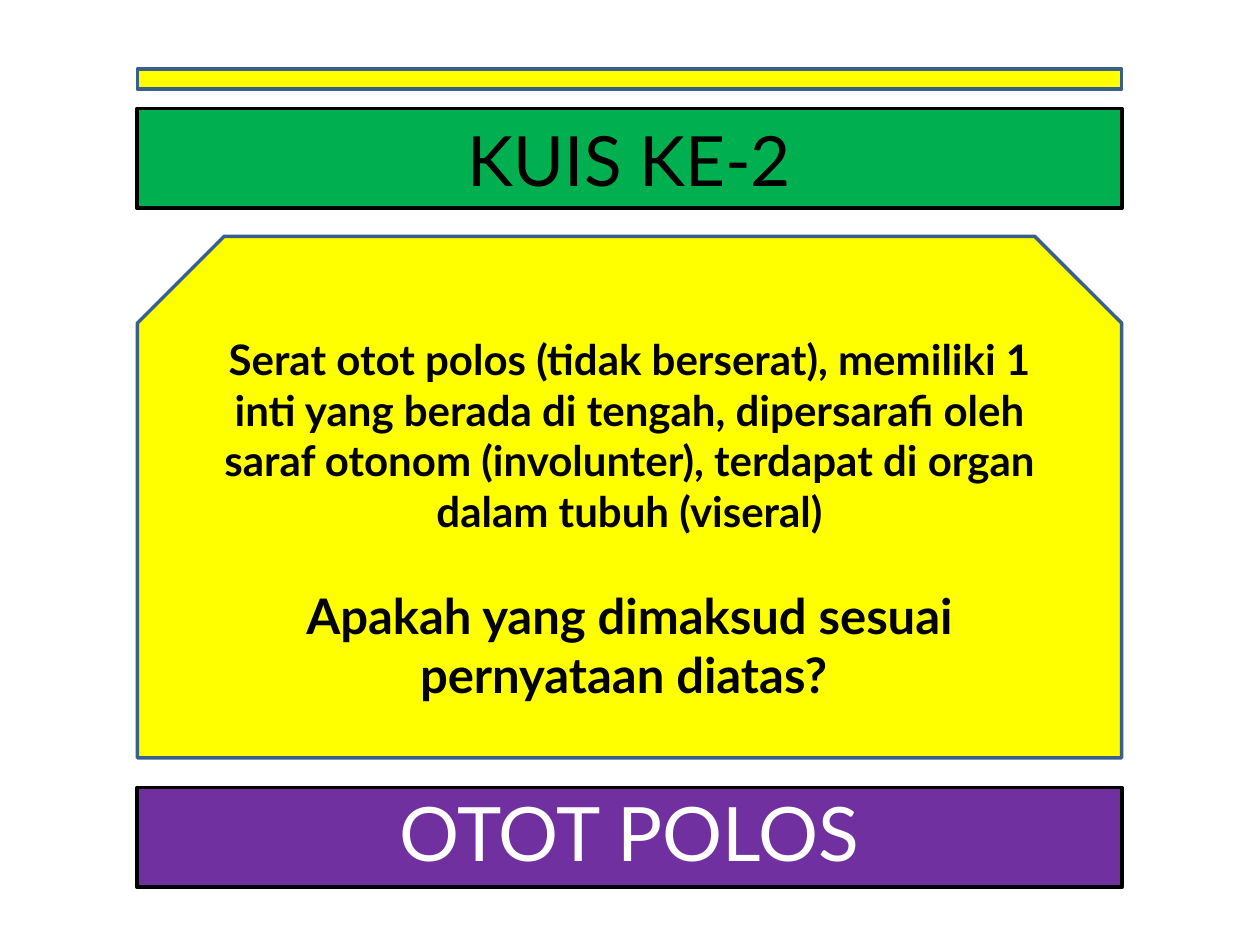
from pptx import Presentation
from pptx.dml.color import RGBColor
from pptx.enum.shapes import MSO_SHAPE as SHAPE
from pptx.enum.text import MSO_ANCHOR as ANCHOR, MSO_AUTO_SIZE as FIT, PP_ALIGN as ALIGN
from pptx.util import Pt

LEFT, WIDTH = 78.5, 562.5
BANNER_HEIGHT = 57
YELLOW, BLACK, EDGE = "FFFF00", "000000", "3A5F8C"


def rgb(value):
    """Turn a hex string into a colour."""
    return RGBColor.from_string(value)


def set_all(target, values):
    """Set every attribute named in a dict."""
    for name, value in values.items():
        setattr(target, name, value)


def paint(sp, fill, line, weight):
    """Give a shape a solid fill and an outline."""
    sp.fill.solid()
    sp.fill.fore_color.rgb = rgb(fill)
    sp.line.color.rgb = rgb(line)
    sp.line.width = Pt(weight)


def write(sp, paragraphs, color, bold=False):
    """Write centred paragraphs given as text, size and paragraph format."""
    tf = sp.text_frame
    set_all(tf, {"word_wrap": True, "auto_size": FIT.NONE, "vertical_anchor": ANCHOR.MIDDLE})
    for i, (text, size, layout) in enumerate(paragraphs):
        p = tf.add_paragraph() if i else tf.paragraphs[0]
        set_all(p, {"alignment": ALIGN.CENTER, **layout})
        r = p.add_run()
        r.text = text
        set_all(r.font, {"name": "Lato", "size": Pt(size), "bold": bold})
        r.font.color.rgb = rgb(color)


def add_block(s, kind, top, height, fill, line, weight):
    """Add a full-width block without a shadow."""
    sp = s.shapes.add_shape(kind, Pt(LEFT), Pt(top), Pt(WIDTH), Pt(height))
    sp.shadow.inherit = False
    paint(sp, fill, line, weight)
    return sp


def add_title(s, text, top):
    """Place the title placeholder as a green banner."""
    sp = s.shapes.title
    set_all(sp, {"left": Pt(LEFT), "top": Pt(top), "width": Pt(WIDTH), "height": Pt(BANNER_HEIGHT)})
    paint(sp, "00B050", BLACK, 2.25)
    write(sp, [(text, 39.6, {})], BLACK)


def main():
    """Build the quiz slide."""
    prs = Presentation()
    set_all(prs, {"slide_width": Pt(720), "slide_height": Pt(540)})
    s = prs.slides.add_slide(prs.slide_layouts[5])

    add_title(s, "KUIS KE-2", 62)
    question = add_block(s, SHAPE.SNIP_2_SAME_RECTANGLE, 135, 298, YELLOW, EDGE, 2)
    write(question, [
        ("Serat otot polos (tidak berserat), memiliki 1 inti yang berada di tengah, "
         "dipersarafi oleh saraf otonom (involunter), terdapat di organ dalam tubuh (viseral)",
         24, {}),
        ("Apakah yang dimaksud sesuai pernyataan diatas? ", 28, {"space_before": Pt(28.8)}),
    ], BLACK, bold=True)
    add_block(s, SHAPE.RECTANGLE, 39.5, 11.5, YELLOW, EDGE, 2)
    answer = add_block(s, SHAPE.RECTANGLE, 450, BANNER_HEIGHT, "7030A0", BLACK, 2.25)
    write(answer, [("OTOT POLOS", 42.9, {"line_spacing": 0.9})], "FFFFFF")

    prs.save("out.pptx")


if __name__ == "__main__":
    main()
